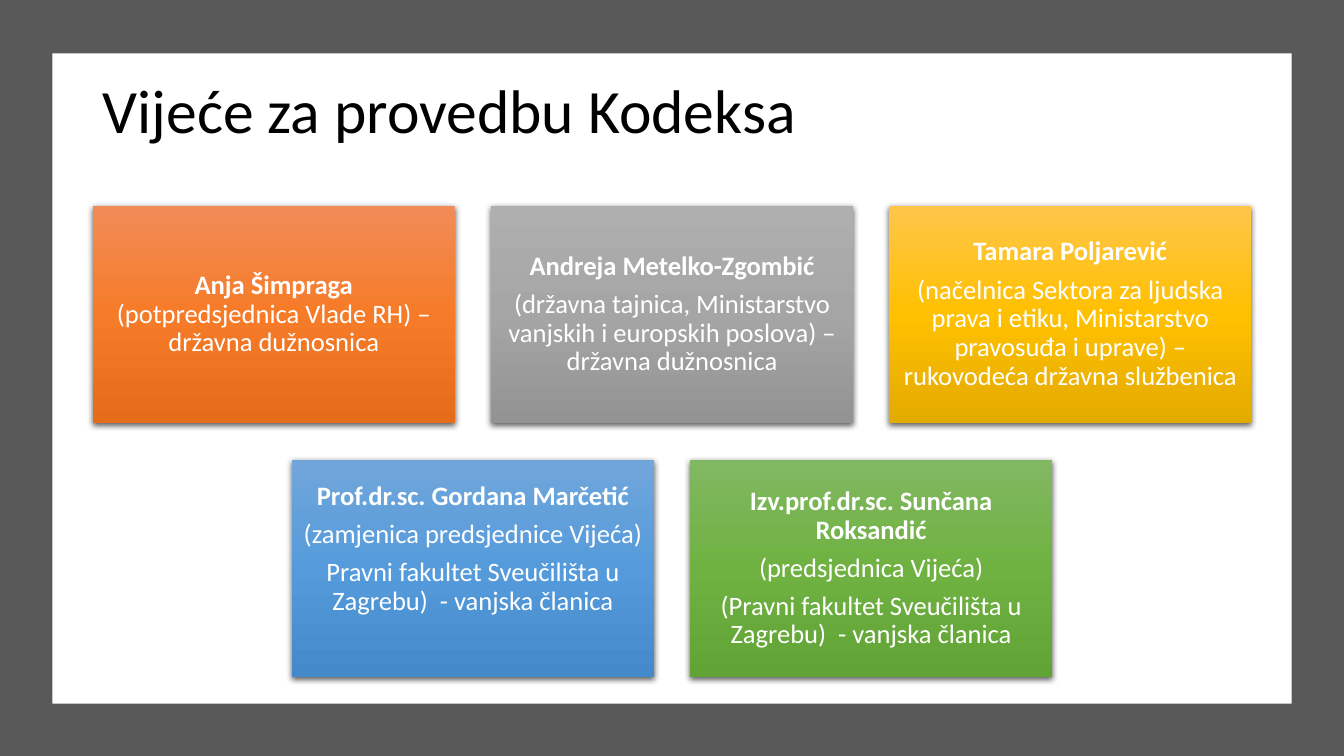
from lxml import etree
from pptx import Presentation
from pptx.dml.color import RGBColor
from pptx.enum.shapes import MSO_SHAPE
from pptx.enum.text import MSO_ANCHOR, PP_ALIGN
from pptx.oxml.ns import qn
from pptx.util import Inches, Pt

RECT = MSO_SHAPE.RECTANGLE
MIDDLE = MSO_ANCHOR.MIDDLE
CENTER = PP_ALIGN.CENTER

FONT = "Calibri"
COLORS = {
    "frame": "595959",
    "white": "FFFFFF",
    "black": "000000",
    "orange": ("F18C57", "F67B28", "E56C19"),
    "gray": ("AFAFAF", "A5A5A5", "939393"),
    "gold": ("FFC64B", "FFC000", "E3AB00"),
    "blue": ("71A6DB", "559BDB", "448ACA"),
    "green": ("81B861", "6FB242", "62A336"),
}

CARD_W, CARD_H, GAP = 3.59, 2.16, 0.36
SLIDE_W, SLIDE_H = 13.33, 7.5
FIRST_ROW_TOP = 2.04
INSET = 0.08

# Each card: colour, paragraphs made of runs (the first run is the name), bottom inset
ROWS = [
    [
        ("orange", [["Anja Šimpraga ",
                     "(potpredsjednica Vlade RH) – državna dužnosnica"]], INSET),
        ("gray", [["Andreja Metelko-Zgombić"],
                  ["(državna tajnica, Ministarstvo vanjskih i europskih "
                   "poslova) – državna dužnosnica"]], INSET),
        ("gold", [["Tamara Poljarević"],
                  ["(načelnica Sektora za ljudska prava i etiku, Ministarstvo "
                   "pravosuđa i uprave) – rukovodeća državna službenica"]], INSET),
    ],
    [
        ("blue", [["Prof.dr.sc. Gordana Marčetić"],
                  ["(zamjenica predsjednice Vijeća)"],
                  ["Pravni fakultet Sveučilišta u Zagrebu)  - vanjska članica"]], 0.46),
        ("green", [["Izv.prof.dr.sc. Sunčana Roksandić"],
                   ["(predsjednica Vijeća)"],
                   ["(Pravni fakultet Sveučilišta u Zagrebu)  - vanjska članica"]], INSET),
    ],
]


class Deck:
    def __init__(self):
        self.prs = Presentation()
        self.prs.slide_width = Inches(SLIDE_W)
        self.prs.slide_height = Inches(SLIDE_H)
        self.s = self.prs.slides.add_slide(self.prs.slide_layouts[6])

    def rect(self, x, y, w, h):
        sp = self.s.shapes.add_shape(RECT, Inches(x), Inches(y), Inches(w), Inches(h))
        sp.line.fill.background()
        sp.shadow.inherit = False
        return sp

    def panel(self, x, y, w, h, color):
        sp = self.rect(x, y, w, h)
        sp.fill.solid()
        sp.fill.fore_color.rgb = RGBColor.from_string(COLORS[color])

    def style(self, p, size, color):
        p.font.name = FONT
        p.font.size = Pt(size)
        p.font.color.rgb = RGBColor.from_string(COLORS[color])
        p.line_spacing = 0.9

    def title(self, text, x, y, w, h):
        tf = self.s.shapes.add_textbox(Inches(x), Inches(y), Inches(w), Inches(h)).text_frame
        tf.word_wrap = True
        tf.vertical_anchor = MIDDLE
        p = tf.paragraphs[0]
        p.text = text
        self.style(p, 44, "black")

    def gradient(self, sp, stops):
        """Fill from top to bottom with evenly spaced colours."""
        sp.fill.gradient()
        sp.fill.gradient_angle = 270
        gs_list = next(sp.element.iter(qn("a:gsLst")))
        gs_list.clear()
        for i, color in enumerate(stops):
            gs = etree.SubElement(gs_list, qn("a:gs"), pos=str(i * 100000 // (len(stops) - 1)))
            etree.SubElement(gs, qn("a:srgbClr"), val=color)

    def drop_shadow(self, sp):
        effects = next(sp.element.iter(qn("a:effectLst")))
        shadow = etree.SubElement(effects, qn("a:outerShdw"), blurRad=str(Pt(4.5)),
                                  dist=str(Pt(1.5)), dir="5400000", algn="ctr",
                                  rotWithShape="0")
        color = etree.SubElement(shadow, qn("a:srgbClr"), val=COLORS["black"])
        etree.SubElement(color, qn("a:alpha"), val="63000")

    def card(self, x, y, color, paragraphs, bottom):
        sp = self.rect(x, y, CARD_W, CARD_H)
        self.gradient(sp, COLORS[color])
        self.drop_shadow(sp)
        tf = sp.text_frame
        tf.word_wrap = True
        tf.vertical_anchor = MIDDLE
        tf.margin_left = tf.margin_right = tf.margin_top = Inches(INSET)
        tf.margin_bottom = Inches(bottom)
        for i, runs in enumerate(paragraphs):
            p = tf.add_paragraph() if i else tf.paragraphs[0]
            p.alignment = CENTER
            p.space_after = Pt(6.65)
            self.style(p, 19, "white")
            for j, text in enumerate(runs):
                r = p.add_run()
                r.text = text
                r.font.bold = i == j == 0


def main():
    deck = Deck()
    deck.panel(0, 0, SLIDE_W, SLIDE_H, "frame")
    deck.panel(0.52, 0.53, 12.29, 6.45, "white")
    deck.title("Vijeće za provedbu Kodeksa", 0.92, 0.4, 11.5, 1.45)
    for row, cards in enumerate(ROWS):
        row_w = len(cards) * (CARD_W + GAP) - GAP
        left = (SLIDE_W - row_w) / 2
        for col, card in enumerate(cards):
            deck.card(left + col * (CARD_W + GAP), FIRST_ROW_TOP + row * (CARD_H + GAP), *card)
    deck.prs.save("out.pptx")


if __name__ == "__main__":
    main()
